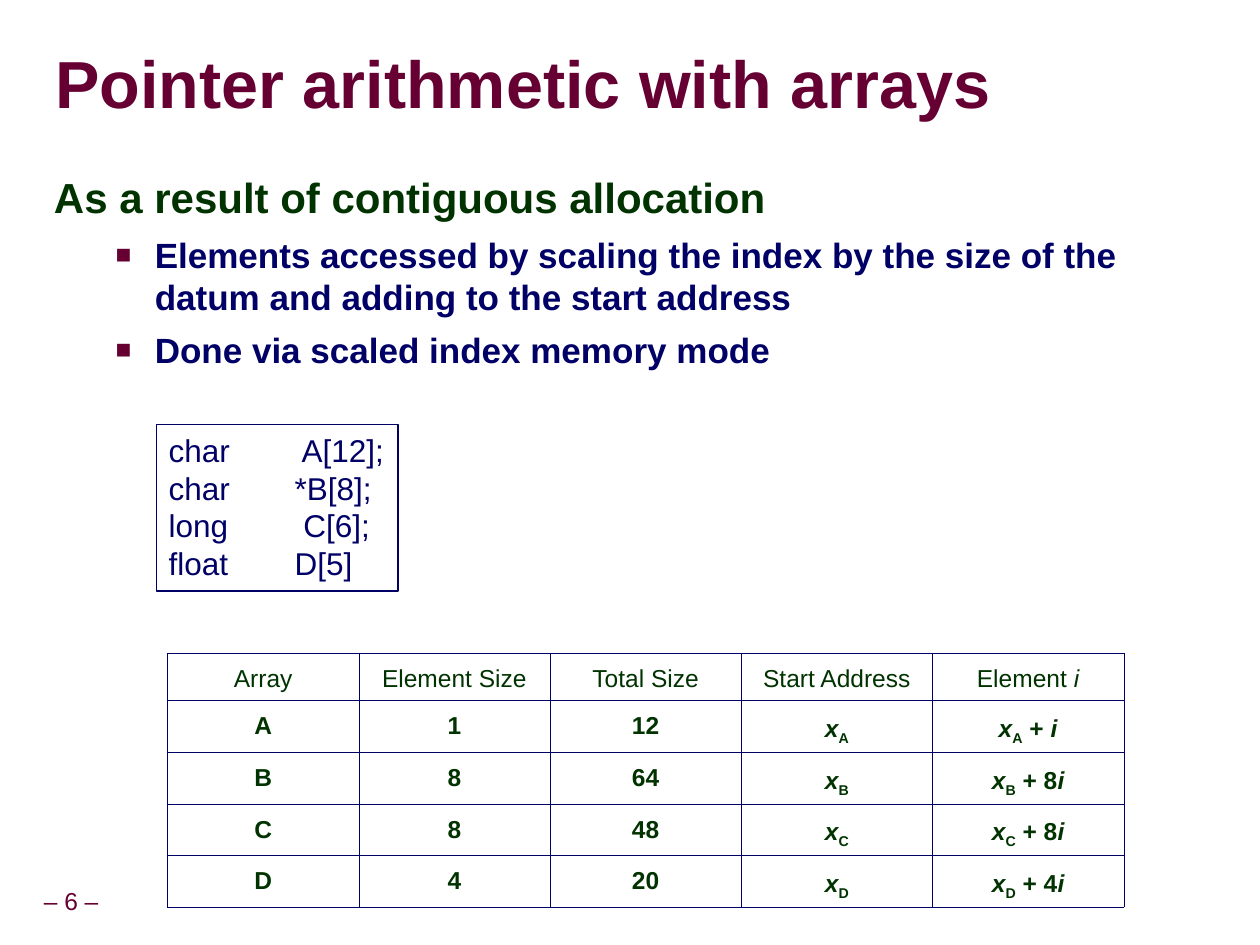
import lxml.etree
import pptx
import pptx.dml.color
import pptx.enum.shapes
import pptx.enum.text
import pptx.oxml.ns
import pptx.util

Color = pptx.dml.color.RGBColor
WINE = Color(0x66, 0x00, 0x33)
GREEN = Color(0x00, 0x33, 0x00)
NAVY = Color(0x00, 0x00, 0x66)

ALIGN = pptx.enum.text.PP_ALIGN
ANCHOR = pptx.enum.text.MSO_ANCHOR
FIT = pptx.enum.text.MSO_AUTO_SIZE

COLS, ROWS = 100, 75  # grid cells across and down the slide
CODE = ["char \t A[12];", "char \t*B[8];", "long \t C[6];", "float \tD[5]"]
HEADS = ["Array", "Element Size", "Total Size", "Start Address"]
ARRAYS = [("A", 1, 12), ("B", 8, 8), ("C", 8, 6), ("D", 4, 5)]


def node(parent, tag, **attrs):
    item = lxml.etree.SubElement(parent, pptx.oxml.ns.qn(tag))
    for name, value in attrs.items():
        item.set(name, str(value))
    return item


def write(para, text, size=14, color=GREEN, bold=False, italic=False, base=0):
    """Add one run; base is the baseline shift in percent."""
    run = para.add_run()
    run.text = text
    font = run.font
    font.name, font.size = "Arial", pptx.util.Pt(size)
    font.bold, font.italic = bold, italic
    font.color.rgb = color
    if base:
        font._element.set("baseline", str(base * 1000))


def shape_para(para, line=1.0, before=0, align=ALIGN.LEFT):
    para.line_spacing = line
    para.space_before = pptx.util.Pt(before)
    para.alignment = align


def indent(para, left, first):
    props = para._p.get_or_add_pPr()
    props.set("marL", str(pptx.util.Inches(left)))
    props.set("indent", str(pptx.util.Inches(first)))
    return props


def bullet(para):
    props = indent(para, 0.81, -0.31)
    node(node(props, "a:buClr"), "a:srgbClr", val=WINE)
    node(props, "a:buSzPct", val=75000)
    node(props, "a:buFont", typeface="Arial")
    node(props, "a:buChar", char="■")


def tab_stop(para, place):
    tabs = node(para._p.get_or_add_pPr(), "a:tabLst")
    node(tabs, "a:tab", pos=pptx.util.Inches(place), algn="l")


def border(cell, widths):
    """Draw the left, right, top and bottom edges, widths in points."""
    props = cell._tc.get_or_add_tcPr()
    for side, width in zip("LRTB", widths):
        line = node(props, f"a:ln{side}", w=pptx.util.Pt(width))
        node(node(line, "a:solidFill"), "a:srgbClr", val=NAVY)


class Page:
    """The slide with its grid and shared style."""

    def __init__(self, deck):
        self.slide = deck.slides.add_slide(deck.slide_layouts[6])
        self.col = deck.slide_width / COLS
        self.row = deck.slide_height / ROWS

    def area(self, left, top, width, height):
        return (round(left * self.col), round(top * self.row),
                round(width * self.col), round(height * self.row))

    def frame(self, shape, pad, wrap=True, anchor=ANCHOR.TOP):
        """Set up a text frame; pad is its side and top insets in inches."""
        text = shape.text_frame
        text.word_wrap, text.vertical_anchor = wrap, anchor
        text.auto_size = FIT.NONE if wrap else FIT.SHAPE_TO_FIT_TEXT
        side, top = map(pptx.util.Inches, pad)
        text.margin_left = text.margin_right = side
        text.margin_top = text.margin_bottom = top
        return text

    def label(self, area, text, pad, line, align=ALIGN.LEFT, wrap=True, **style):
        box = self.slide.shapes.add_textbox(*self.area(*area))
        para = self.frame(box, pad, wrap, ANCHOR.MIDDLE).paragraphs[0]
        shape_para(para, line, align=align)
        write(para, text, **style)

    def body(self, area, head, points):
        box = self.slide.shapes.add_textbox(*self.area(*area))
        text = self.frame(box, (0.1, 0.05))
        para = text.paragraphs[0]
        shape_para(para, 0.95, 15)
        indent(para, 0.38, -0.37)
        write(para, head, size=24, bold=True)
        for point in points:
            para = text.add_paragraph()
            shape_para(para, before=6.2)
            bullet(para)
            write(para, point, size=20, color=NAVY, bold=True)

    def code(self, area, lines):
        kind = pptx.enum.shapes.MSO_SHAPE.RECTANGLE
        box = self.slide.shapes.add_shape(kind, *self.area(*area))
        box.shadow.inherit = False
        box.fill.background()
        box.line.color.rgb, box.line.width = NAVY, pptx.util.Pt(0.75)
        text = self.frame(box, (0.1, 0.05), wrap=False)
        for i, line in enumerate(lines):
            para = text.add_paragraph() if i else text.paragraphs[0]
            shape_para(para)
            tab_stop(para, 1)
            write(para, line, size=18, color=NAVY)

    def table(self, area, rows, head):
        """Fill a grid; each cell is a list of (text, format) runs."""
        down, over = len(rows), len(rows[0])
        left, top, width, height = self.area(*area)
        grid = self.slide.shapes.add_table(down, over, left, top, width, height).table
        grid.first_row = grid.horz_banding = False
        first = round(head * self.row)
        for r, cells in enumerate(rows):
            grid.rows[r].height = (height - first) // (down - 1) if r else first
            for c, runs in enumerate(cells):
                cell = grid.cell(r, c)
                edges = (c == 0, c == over - 1, r == 0, r == down - 1)
                border(cell, [0.11 if outer else 0.06 for outer in edges])
                cell.fill.background()
                cell.margin_top = pptx.util.Inches(0.13)
                para = cell.text_frame.paragraphs[0]
                shape_para(para, 0.82, 8.8, ALIGN.CENTER)
                for text, style in runs:
                    write(para, text, bold=r > 0, **style)


def array_row(name, size, count):
    start = [("x", {"italic": True}), (name, {"base": -25})]
    scale = f" + {size}" if size > 1 else " + "
    item = start + [(scale, {}), ("i", {"italic": True})]
    plain = [[(str(value), {})] for value in (name, size, size * count)]
    return plain + [start, item]


def main():
    deck = pptx.Presentation()
    deck.slide_width = pptx.util.Inches(10)
    deck.slide_height = pptx.util.Inches(7.5)
    page = Page(deck)
    page.label((-0.9, 69.9, 13.1, 3.4), "– 6 –", (0.05, 0.05), 0.9,
               align=ALIGN.CENTER, wrap=False, color=WINE)
    heads = [[(head, {})] for head in HEADS]
    heads.append([("Element ", {}), ("i", {"italic": True})])
    rows = [heads] + [array_row(*array) for array in ARRAYS]
    page.table((13.3, 51.8, 75.9, 20.2), rows, head=3.8)
    page.code((12.4, 33.7, 19.2, 13.2), CODE)
    page.label((4.4, 2.7, 95.3, 8.5), "Pointer arithmetic with arrays", (0, 0), 0.87,
               size=38, color=WINE, bold=True)
    page.body((3.2, 13.4, 90.8, 57.1), "As a result of contiguous allocation", [
        "Elements accessed by scaling the index by the size of the datum "
        "and adding to the start address",
        "Done via scaled index memory mode",
    ])
    deck.save("out.pptx")


if __name__ == "__main__":
    main()
